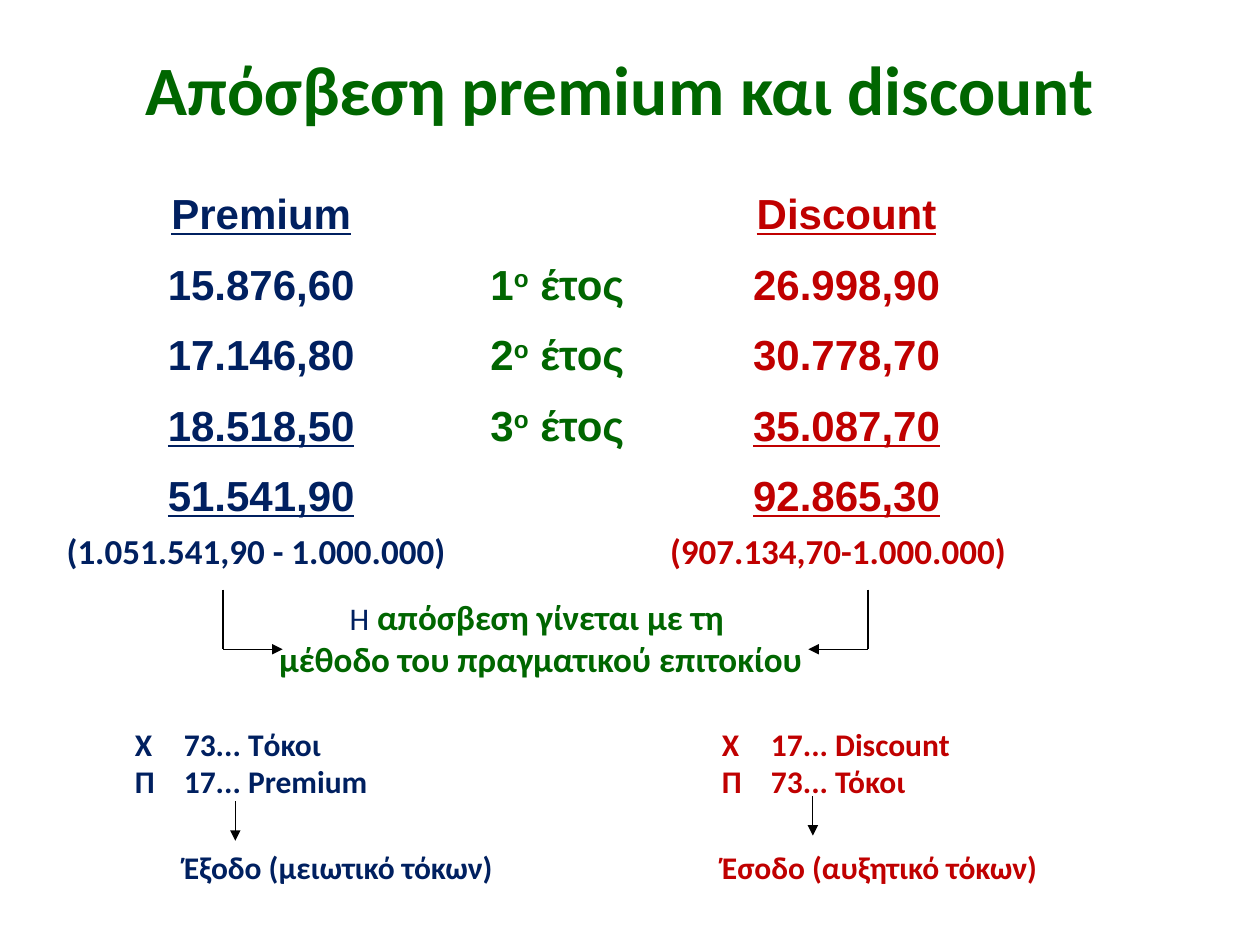
from dataclasses import dataclass

from lxml import etree
from pptx import Presentation
from pptx.dml.color import RGBColor
from pptx.enum import shapes, text
from pptx.oxml import ns
from pptx.util import Pt


@dataclass(frozen=True)
class Theme:
    green: RGBColor = RGBColor(0x00, 0x66, 0x00)
    navy: RGBColor = RGBColor(0x00, 0x20, 0x60)
    red: RGBColor = RGBColor(0xC0, 0x00, 0x00)
    black: RGBColor = RGBColor(0x00, 0x00, 0x00)
    body_font: str = "Calibri"
    table_font: str = "Arial"
    title_size: float = 39.6
    table_size: float = 24
    note_size: float = 20
    entry_size: float = 18


THEME = Theme()
YEAR_ROWS = [
    ("Premium", "", "Discount"),
    ("15.876,60", "1", "26.998,90"),
    ("17.146,80", "2", "30.778,70"),
    ("18.518,50", "3", "35.087,70"),
    ("51.541,90", "", "92.865,30"),
]
UNDERLINED_ROWS = (0, 3, 4)


def set_font(font, size, color, name=THEME.body_font, bold=True):
    font.name, font.size, font.bold = name, Pt(size), bold
    font.color.rgb = color


def add_run(paragraph, words):
    run = paragraph.add_run()
    run.text = words
    return run


def add_tab(paragraph, position, alignment):
    properties = paragraph._p.get_or_add_pPr()
    tabs = etree.SubElement(properties, ns.qn("a:tabLst"))
    etree.SubElement(tabs, ns.qn("a:tab"), pos=str(Pt(position)), algn=alignment)


def add_text_frame(slide, left, top, width, height):
    box = slide.shapes.add_textbox(Pt(left), Pt(top), Pt(width), Pt(height))
    box.text_frame.word_wrap = True
    return box.text_frame


def add_line(container, start, end, arrow=False):
    line = container.add_connector(
        shapes.MSO_CONNECTOR.STRAIGHT, *(Pt(value) for value in (*start, *end)))
    line.line.color.rgb = THEME.black
    line.line.width = Pt(0.75)
    if arrow:
        etree.SubElement(line.line._get_or_add_ln(), ns.qn("a:tailEnd"), type="triangle")
    etree.SubElement(line._element.spPr, ns.qn("a:effectLst"))


def place_title(slide, left, top, width, height):
    title = slide.shapes.title
    title.left, title.top, title.width, title.height = map(Pt, (left, top, width, height))
    title.text_frame.text = "Απόσβεση premium και discount"
    title.text_frame.vertical_anchor = text.MSO_ANCHOR.MIDDLE
    paragraph = title.text_frame.paragraphs[0]
    paragraph.alignment = text.PP_ALIGN.CENTER
    set_font(paragraph.font, THEME.title_size, THEME.green)


def add_amounts_table(slide, left, top, column_widths, row_height):
    table = slide.shapes.add_table(
        len(YEAR_ROWS), len(column_widths), Pt(left), Pt(top),
        Pt(sum(column_widths)), Pt(row_height * len(YEAR_ROWS))).table
    table.first_row = table.horz_banding = False
    for column, width in zip(table.columns, column_widths):
        column.width = Pt(width)
    colors = (THEME.navy, THEME.green, THEME.red)
    for row_index, row in enumerate(YEAR_ROWS):
        for column_index, words in enumerate(row):
            cell = table.cell(row_index, column_index)
            cell.fill.background()
            if not words:
                continue
            paragraph = cell.text_frame.paragraphs[0]
            paragraph.alignment = text.PP_ALIGN.CENTER
            paragraph.line_spacing = 1.15
            set_font(paragraph.font, THEME.table_size, colors[column_index], THEME.table_font)
            add_run(paragraph, words)
            if column_index == 1:
                ordinal = add_run(paragraph, "ο")
                ordinal._r.get_or_add_rPr().set("baseline", "30000")
                add_run(paragraph, " έτος")
            else:
                paragraph.font.underline = row_index in UNDERLINED_ROWS


def add_differences(slide, left, top, width, height):
    paragraph = add_text_frame(slide, left, top, width, height).paragraphs[0]
    add_tab(paragraph, 537, "r")
    set_font(paragraph.font, THEME.note_size, THEME.navy)
    add_run(paragraph, "(1.051.541,90 - 1.000.000)\t")
    add_run(paragraph, "(907.134,70-1.000.000)").font.color.rgb = THEME.red


def add_method_note(slide, left, top, width, height):
    paragraph = add_text_frame(slide, left, top, width, height).paragraphs[0]
    paragraph.alignment = text.PP_ALIGN.CENTER
    set_font(paragraph.font, THEME.note_size, THEME.green)
    set_font(add_run(paragraph, "Η").font, THEME.entry_size, THEME.navy, bold=False)
    add_run(paragraph, " απόσβεση γίνεται με τη ")
    paragraph.add_line_break()
    add_run(paragraph, "μέθοδο του πραγματικού επιτοκίου")


def add_elbow_arrow(slide, left, top, reach, drop):
    """Goes down, then sideways; a negative reach points left."""
    group = slide.shapes.add_group_shape()
    corner = (left, top + drop)
    add_line(group.shapes, (left, top), corner)
    add_line(group.shapes, corner, (left + reach, top + drop), arrow=True)


def add_journal_entry(slide, left, top, width, height, lines, color, arrow_offset):
    frame = add_text_frame(slide, left, top, width, height)
    for index, words in enumerate(lines):
        paragraph = frame.paragraphs[0] if index == 0 else frame.add_paragraph()
        add_tab(paragraph, 28, "l")
        set_font(paragraph.font, THEME.entry_size, color)
        add_run(paragraph, words)
    paragraph.space_before = Pt(27.5)
    arrow_left, arrow_top = left + arrow_offset[0], top + arrow_offset[1]
    add_line(slide.shapes, (arrow_left, arrow_top), (arrow_left, arrow_top + 22.5), arrow=True)


def main():
    presentation = Presentation()
    presentation.slide_width, presentation.slide_height = Pt(720), Pt(540)
    slide = presentation.slides.add_slide(presentation.slide_layouts[5])
    place_title(slide, 36, 21.5, 636, 57)
    add_amounts_table(slide, 65, 102, (168.5, 170, 160.5), 40.3)
    add_differences(slide, 31, 299, 657, 32)
    add_method_note(slide, 82, 337, 454, 55)
    add_elbow_arrow(slide, 127.5, 337, 34, 34)
    add_elbow_arrow(slide, 496, 337, -34, 34)
    add_journal_entry(
        slide, 70, 410.5, 238, 102,
        ("Χ\t73... Tόκοι", "Π\t17... Premium", "\tΈξοδο (μειωτικό τόκων)"),
        THEME.navy, (64.5, 47.5))
    add_journal_entry(
        slide, 405.5, 410.5, 238, 102,
        ("Χ\t17... Discount", "Π\t73... Τόκοι", "Έσοδο (αυξητικό τόκων)"),
        THEME.red, (59, 44.5))
    presentation.save("out.pptx")


if __name__ == "__main__":
    main()
